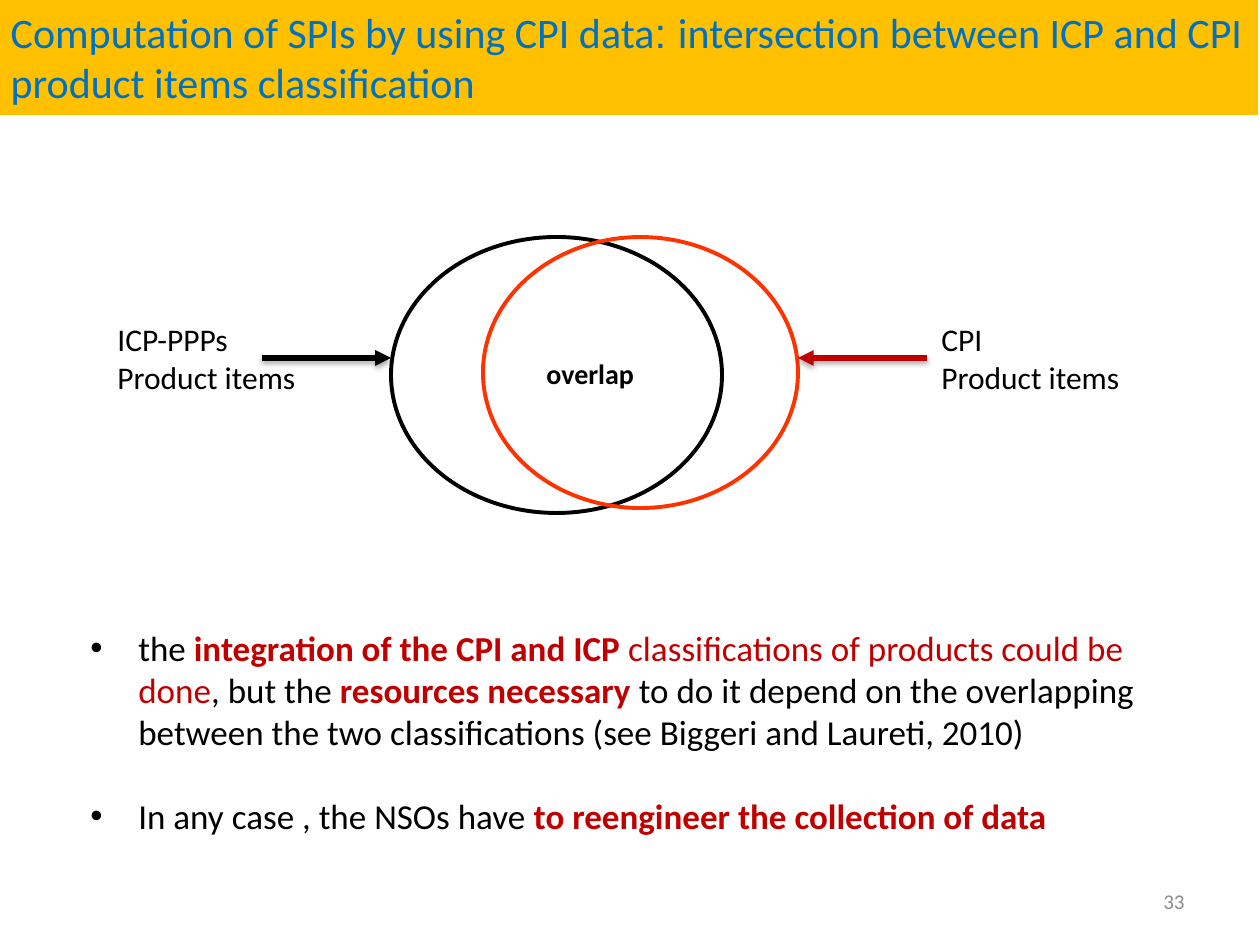
from lxml.etree import SubElement
from pptx import Presentation
from pptx.dml.color import RGBColor
from pptx.enum.shapes import MSO_CONNECTOR, MSO_SHAPE
from pptx.enum.text import MSO_ANCHOR, MSO_AUTO_SIZE, PP_ALIGN
from pptx.oxml import parse_xml
from pptx.oxml.ns import nsdecls, qn
from pptx.util import Pt

BLACK, RED, BLUE, GOLD, GREY = "000000", "C00000", "0070C0", "FFC000", "8C8C8C"

# Runs: text, colour, bold, font
TITLE = [
    ("Computation of SPIs by using CPI data", BLUE, False, "Calibri"),
    (": ", BLUE, False, "Arial"),
    ("intersection between ICP and CPI product items classification",
     BLUE, False, "Calibri"),
]
# Box, fill, line
RINGS = [
    ((391, 237, 331, 276), "FFFFFF", BLACK),
    ((483, 237, 315, 271), None, "FF3300"),
]
# Box, lines, size, bold
LABELS = [
    ((105, 314, 218, 89), ["ICP-PPPs", "Product items"], 18, False),
    ((929, 314, 268, 89), ["CPI", "Product items"], 18, False),
    ((534, 350, 169, 47), ["overlap"], 16, True),
]
# Start x, end x, colour
ARROWS = [(262, 391, BLACK), (927, 798, RED)]
ARROW_Y = 358
POINTS = [
    [("the ", BLACK, False),
     ("integration of the CPI and ICP ", RED, True),
     ("classifications of products could be done", RED, False),
     (", but the ", BLACK, False),
     ("resources necessary ", RED, True),
     ("to do it depend on the overlapping between the two classifications "
      "(see Biggeri and Laureti, 2010)", BLACK, False)],
    [("In any case , the NSOs have ", BLACK, False),
     ("to reengineer the collection of data", RED, True)],
]
SHADOW = (
    f'<a:effectLst {nsdecls("a")}><a:outerShdw blurRad="40000" dist="23000" '
    'dir="5400000" rotWithShape="0"><a:srgbClr val="000000">'
    '<a:alpha val="35000"/></a:srgbClr></a:outerShdw></a:effectLst>'
)


def px(n):
    return round(n * 914400 / 126)


def rgb(code):
    return RGBColor.from_string(code)


def write(para, runs, size):
    for text, color, bold, *face in runs:
        run = para.add_run()
        run.text = text
        font = run.font
        font.name = face[0] if face else "Calibri"
        font.size, font.bold = Pt(size), bold
        font.color.rgb = rgb(color)


def add_text(slide, box, paras, size):
    frame = slide.shapes.add_textbox(*map(px, box)).text_frame
    frame.word_wrap = True
    for i, runs in enumerate(paras):
        para = frame.add_paragraph() if i else frame.paragraphs[0]
        write(para, runs, size)
    return frame


def add_ring(slide, box, fill, line):
    ring = slide.shapes.add_shape(MSO_SHAPE.OVAL, *map(px, box))
    ring.shadow.inherit = False
    if fill:
        ring.fill.solid()
        ring.fill.fore_color.rgb = rgb(fill)
    else:
        ring.fill.background()
    ring.line.color.rgb = rgb(line)
    ring.line.width = Pt(2.25)


def add_arrow(slide, start, end, color):
    y = px(ARROW_Y)
    arrow = slide.shapes.add_connector(
        MSO_CONNECTOR.STRAIGHT, px(start), y, px(end), y)
    arrow.line.color.rgb = rgb(color)
    arrow.line.width = Pt(3)
    SubElement(arrow.line._get_or_add_ln(), qn("a:tailEnd"), type="triangle")
    arrow._element.spPr.append(parse_xml(SHADOW))


def add_bullet(para):
    props = para._p.get_or_add_pPr()
    props.set("marL", str(px(48)))
    props.set("indent", str(px(-48)))
    SubElement(props, qn("a:buFont"), typeface="Arial")
    SubElement(props, qn("a:buChar"), char="•")


def add_title(slide):
    title = slide.shapes.title
    title.left, title.top, title.width, title.height = map(
        px, (-2, 0, 1260, 115))
    title.fill.solid()
    title.fill.fore_color.rgb = rgb(GOLD)
    frame = title.text_frame
    frame.auto_size = MSO_AUTO_SIZE.NONE
    frame.vertical_anchor = MSO_ANCHOR.TOP
    frame.word_wrap = True
    frame.paragraphs[0].alignment = PP_ALIGN.LEFT
    write(frame.paragraphs[0], TITLE, 24)


def main():
    deck = Presentation()
    deck.slide_width, deck.slide_height = px(1260), px(945)
    slide = deck.slides.add_slide(deck.slide_layouts[5])
    add_title(slide)
    for ring in RINGS:
        add_ring(slide, *ring)
    for box, lines, size, bold in LABELS:
        add_text(slide, box, [[(line, BLACK, bold)] for line in lines], size)
    for arrow in ARROWS:
        add_arrow(slide, *arrow)

    body = add_text(slide, (78, 620, 1081, 224), POINTS, 20)
    body.paragraphs[0].space_after = Pt(24)
    for para in body.paragraphs:
        add_bullet(para)

    number = add_text(slide, (903, 876, 294, 50), [[("33", GREY, False)]], 12)
    number.vertical_anchor = MSO_ANCHOR.MIDDLE
    number.paragraphs[0].alignment = PP_ALIGN.RIGHT
    deck.save("out.pptx")


if __name__ == "__main__":
    main()
